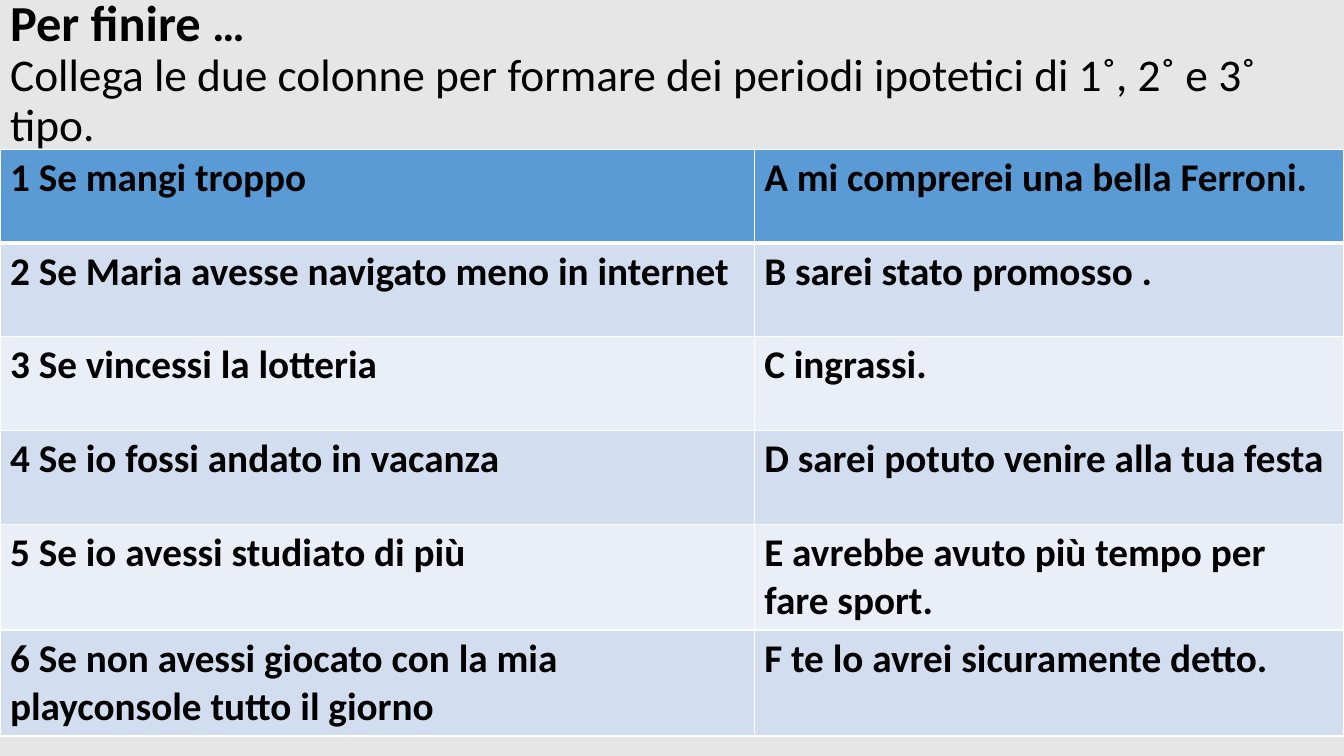
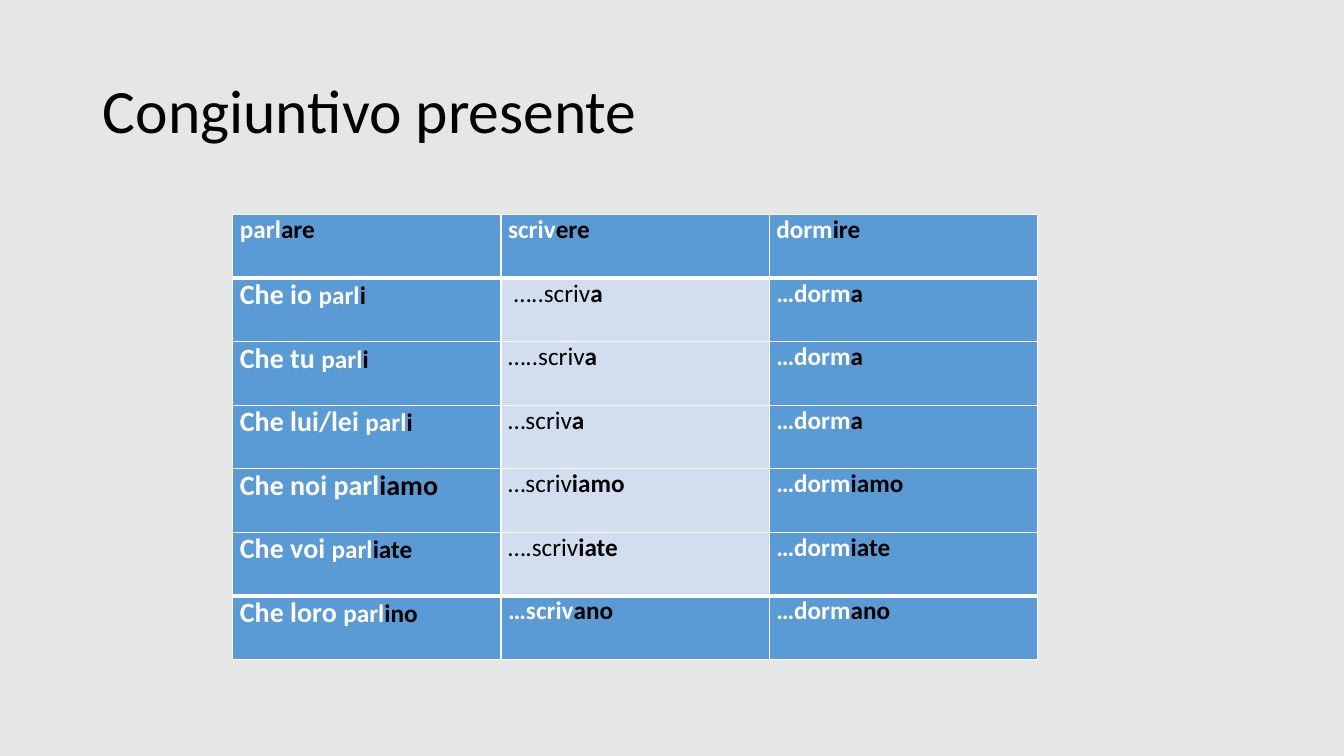
from dataclasses import dataclass

from lxml import etree
from pptx import Presentation
from pptx.dml.color import RGBColor
from pptx.enum import text
from pptx.oxml import ns
from pptx.util import Inches, Pt


@dataclass(frozen=True)
class Theme:
    font: str = "Calibri"
    background: str = "E7E6E6"
    ink: str = "000000"
    white: str = "FFFFFF"
    accent: str = "5B9BD5"
    band_dark: str = "D2DEEF"
    band_light: str = "EAEFF7"
    title: float = 44
    heading: float = 36
    task: float = 32.4
    exercise: float = 28
    pronoun: float = 20
    verb: float = 18
    thin: float = 1
    thick: float = 3


THEME = Theme()


@dataclass(frozen=True)
class Span:
    text: str
    size: float
    color: str = THEME.ink
    bold: bool = True


@dataclass(frozen=True)
class Cell:
    spans: list
    fill: str


PAIRS = [
    ("1 Se mangi troppo", "A mi comprerei una bella Ferroni."),
    ("2 Se Maria avesse navigato meno in internet", "B sarei stato promosso ."),
    ("3 Se vincessi la lotteria", "C ingrassi."),
    ("4 Se io fossi andato in vacanza", "D sarei potuto venire alla tua festa"),
    ("5 Se io avessi studiato di più", "E avrebbe avuto più tempo per fare sport."),
    ("6 Se non avessi giocato con la mia playconsole tutto il giorno",
     "F te lo avrei sicuramente detto."),
]

INFINITIVES = [("parl", "are"), ("scriv", "ere"), ("dorm", "ire")]

CONJUGATION = [
    ("Che io ", "i", " …..", "a"),
    ("Che tu ", "i", "…..", "a"),
    ("Che lui/lei ", "i", "…", "a"),
    ("Che noi ", "iamo", "…", "iamo"),
    ("Che voi ", "iate", "….", "iate"),
    ("Che loro ", "ino", "…", "ano"),
]


def write(para, spans):
    for span in spans:
        run = para.add_run()
        run.text = span.text
        run.font.name = THEME.font
        run.font.size = Pt(span.size)
        run.font.bold = span.bold
        run.font.color.rgb = RGBColor.from_string(span.color)


def set_borders(cell, top, bottom):
    properties = cell._tc.get_or_add_tcPr()
    widths = {"lnL": THEME.thin, "lnR": THEME.thin, "lnT": top, "lnB": bottom}
    for side, width in widths.items():
        line = etree.SubElement(properties, ns.qn("a:" + side), w=str(Pt(width)))
        fill = etree.SubElement(line, ns.qn("a:solidFill"))
        etree.SubElement(fill, ns.qn("a:srgbClr"), val=THEME.white)


def add_page(deck, box, lines):
    page = deck.slides.add_slide(deck.slide_layouts.get_by_name("Title Only"))
    title = page.shapes.title
    title.left, title.top, title.width, title.height = map(Inches, box)
    frame = title.text_frame
    frame.word_wrap = True
    frame.auto_size = text.MSO_AUTO_SIZE.NONE
    frame.vertical_anchor = text.MSO_ANCHOR.MIDDLE
    for index, spans in enumerate(lines):
        para = frame.add_paragraph() if index else frame.paragraphs[0]
        para.alignment = text.PP_ALIGN.LEFT
        para.line_spacing = 0.9
        write(para, spans)
    return page


def add_grid(page, left, top, widths, heights, rows, thick_rules, insets=(0.1, 0.05)):
    box = map(Inches, (left, top, sum(widths), sum(heights)))
    table = page.shapes.add_table(len(heights), len(widths), *box).table
    table.first_row = table.horz_banding = False
    for column, width in zip(table.columns, widths):
        column.width = Inches(width)
    for row, height in zip(table.rows, heights):
        row.height = Inches(height)
    rules = [THEME.thick if index in thick_rules else THEME.thin
             for index in range(len(heights) + 1)]
    for row_index, row in enumerate(rows):
        for column_index, content in enumerate(row):
            cell = table.cell(row_index, column_index)
            cell.margin_left = cell.margin_right = Inches(insets[0])
            cell.margin_top = cell.margin_bottom = Inches(insets[1])
            set_borders(cell, rules[row_index], rules[row_index + 1])
            cell.fill.solid()
            cell.fill.fore_color.rgb = RGBColor.from_string(content.fill)
            write(cell.text_frame.paragraphs[0], content.spans)


def add_matching_exercise(deck):
    page = add_page(deck, (0, 0, 12.87, 1.48), [
        [Span("Per finire ", THEME.heading), Span("…", THEME.task)],
        [Span("Collega le due colonne per formare dei periodi ipotetici di 1˚, 2˚ e 3˚ tipo.",
              THEME.task, bold=False)],
    ])
    bands = (THEME.band_light, THEME.band_dark)
    rows = [[Cell([Span(phrase, THEME.exercise)], bands[index % 2] if index else THEME.accent)
             for phrase in pair]
            for index, pair in enumerate(PAIRS)]
    add_grid(page, 0, 1.48, [7.48, 5.85], [0.93] * 4 + [1.05] * 2, rows, {1})


def verb_cell(stem, ending):
    return Cell([Span(stem, THEME.verb, THEME.white), Span(ending, THEME.verb)], THEME.accent)


def conjugation_row(pronoun, are_ending, dots, other_ending):
    size = THEME.pronoun if are_ending == "iamo" else THEME.verb
    first = Cell([Span(pronoun, THEME.pronoun, THEME.white),
                  Span("parl", size, THEME.white), Span(are_ending, size)], THEME.accent)
    if other_ending == "ano":
        second = verb_cell(dots + "scriv", other_ending)
    else:
        second = Cell([Span(dots + "scriv", THEME.verb, bold=False),
                       Span(other_ending, THEME.verb)], THEME.band_dark)
    return [first, second, verb_cell("…dorm", other_ending)]


def add_conjugation(deck):
    page = add_page(deck, (0.92, 0.4, 11.5, 1.45),
                    [[Span("Congiuntivo presente", THEME.title, bold=False)]])
    rows = [[verb_cell(*verb) for verb in INFINITIVES]]
    rows += [conjugation_row(*forms) for forms in CONJUGATION]
    add_grid(page, 2.31, 2.13, [2.66] * 3, [0.63] * 7, rows, {1, 6}, (0.07, 0))


def main():
    deck = Presentation()
    deck.slide_width, deck.slide_height = Inches(13.33), Inches(7.5)
    background = deck.slide_master.background.fill
    background.solid()
    background.fore_color.rgb = RGBColor.from_string(THEME.background)
    add_matching_exercise(deck)
    add_conjugation(deck)
    deck.save("out.pptx")


if __name__ == "__main__":
    main()
